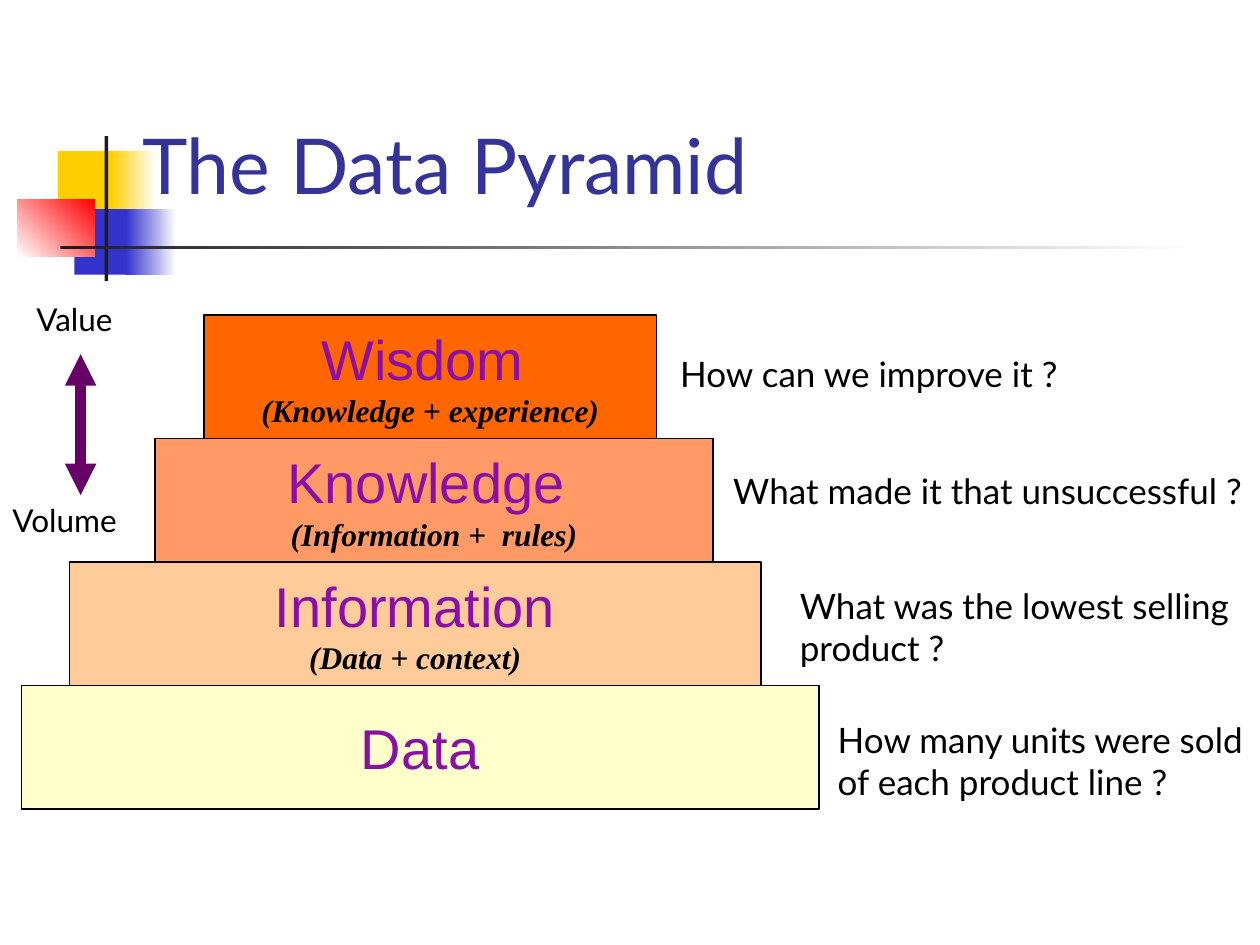
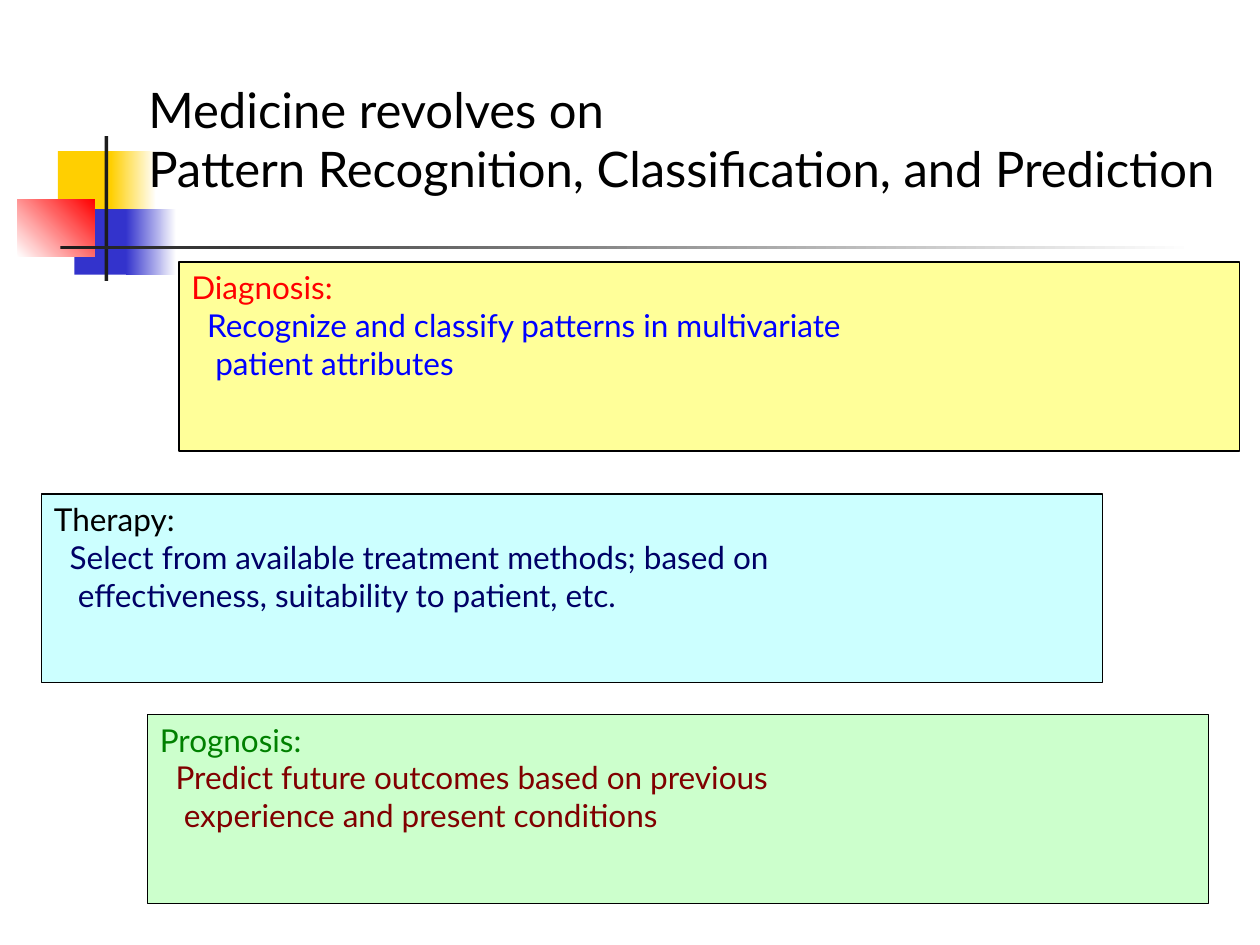
from dataclasses import dataclass, replace

from lxml import etree
from pptx import Presentation
from pptx.dml.color import RGBColor
from pptx.enum.shapes import MSO_CONNECTOR, MSO_SHAPE
from pptx.enum.text import MSO_ANCHOR, PP_ALIGN
from pptx.oxml.ns import qn
from pptx.util import Inches, Pt

RECT = MSO_SHAPE.RECTANGLE
STRAIGHT = MSO_CONNECTOR.STRAIGHT
TOP, MIDDLE = MSO_ANCHOR.TOP, MSO_ANCHOR.MIDDLE
LEFT, CENTER = PP_ALIGN.LEFT, PP_ALIGN.CENTER

COLS, ROWS = 100, 75
WIDTH, HEIGHT = Inches(10), Inches(7.5)


@dataclass(frozen=True)
class Style:
    size: int
    color: str = "000000"
    font: str = "Lato"
    strong: bool = False


@dataclass(frozen=True)
class Theme:
    white: str = "FFFFFF"
    black: str = "000000"
    dark: str = "1C1C1C"
    gold: str = "FFCF01"
    blue: str = "3333CC"
    red: str = "FF0000"
    arrow: str = "660066"
    edge: float = 0.75
    shaft: float = 6
    title: Style = Style(44, "333399")
    lead: Style = Style(28)
    ask: Style = Style(20)
    body: Style = Style(18)
    tier: Style = Style(32, "8A0FA7", "Arial")
    note: Style = Style(18, font="Times New Roman", strong=True)


@dataclass(frozen=True)
class Box:
    x: float
    y: float
    w: float
    h: float

    def inner(self, x, y, w, h):
        return Box(self.x + x, self.y + y, w, h)

    def place(self):
        return across(self.x), down(self.y), across(self.w), down(self.h)


THEME = Theme()
PAGE = Box(0, 0, COLS, ROWS)

TIERS = [
    ("Data", None, "FFFFCC", 1.7, 63.3, 0.5, 2.1, 34.5,
     ["How many units were sold", "of each product line ?"]),
    ("Information", "(Data + context)", "FFCC99", 5.5, 54.9, 2.1, 1.3, 37,
     ["What was the lowest selling", "product ?"]),
    ("Knowledge ", "(Information +  rules)", "FF9966", 12.3, 44.3, 0.6, 2, 42.8,
     ["What made it that unsuccessful ?"]),
    ("Wisdom ", "(Knowledge + experience)", "FF6600", 16.2, 35.9, 0.9, 2.5, 32.4,
     ["How can we improve it ?"]),
]

PANELS = [
    (14.2, 20.8, "FFFF99", "FF0000", "0000FF", "Diagnosis:",
     ["Recognize and classify patterns in multivariate", "patient attributes"]),
    (3.3, 39.2, "CCFFFF", "000000", "000066", "Therapy:",
     ["Select from available treatment methods; based on",
      "effectiveness, suitability to patient, etc."]),
    (11.7, 56.7, "CCFFCC", "008000", "800000", "Prognosis:",
     ["Predict future outcomes based on previous",
      "experience and present conditions"]),
]


def across(cols):
    return round(WIDTH * cols / COLS)


def down(rows):
    return round(HEIGHT * rows / ROWS)


def rgb(code):
    return RGBColor.from_string(code)


def write(frame, lines, align=LEFT, anchor=TOP):
    frame.word_wrap = True
    frame.vertical_anchor = anchor
    for i, (text, style, indent) in enumerate(lines):
        para = frame.add_paragraph() if i else frame.paragraphs[0]
        para.alignment = align
        if indent:
            props = para._p.get_or_add_pPr()
            props.set("marL", str(across(indent)))
            props.set("indent", "0")
        run = para.add_run()
        run.text = text
        font = run.font
        font.name, font.size = style.font, Pt(style.size)
        font.bold = font.italic = style.strong
        font.color.rgb = rgb(style.color)


def label(slide, box, texts, style, indent=0, anchor=TOP):
    frame = slide.shapes.add_textbox(*box.place()).text_frame
    write(frame, [(text, style, indent) for text in texts], anchor=anchor)


def block(slide, box, color, fade=None, angle=0, edge=False):
    shape = slide.shapes.add_shape(RECT, *box.place())
    shape.shadow.inherit = False
    if fade:
        shape.fill.gradient()
        shape.fill.gradient_angle = angle
        for stop, code in zip(shape.fill.gradient_stops, (color, fade)):
            stop.color.rgb = rgb(code)
    else:
        shape.fill.solid()
        shape.fill.fore_color.rgb = rgb(color)
    if edge:
        shape.line.color.rgb = rgb(THEME.black)
        shape.line.width = Pt(THEME.edge)
    else:
        shape.line.fill.background()
    return shape


def motif(slide, box):
    t = THEME
    block(slide, box.inner(3.2, 1.2, 4.8, 5.2), t.gold)
    block(slide, box.inner(7.4, 1.2, 3.6, 5.2), t.gold, t.white)
    block(slide, box.inner(4.5, 5.8, 4.6, 5.2), t.blue)
    block(slide, box.inner(8.6, 5.8, 4, 5.2), t.blue, t.white)
    block(slide, box.inner(0, 5, 6.1, 4.6), t.white, t.red, 45)
    block(slide, box.inner(6.9, 0, 0.3, 11.5), t.dark)
    block(slide, box.inner(3.4, 8.7, 90, 0.3), t.dark, t.white)


def pyramid(slide, box):
    step = box.h / len(TIERS)
    spots = []
    for i, (name, note, color, x, w, gap, drop, wide, asks) in enumerate(TIERS):
        tier = box.inner(x, box.h - (i + 1) * step, w, step)
        lines = [(name, THEME.tier, 0)]
        if note:
            lines.append((note, THEME.note, 0))
        shape = block(slide, tier, color, edge=True)
        write(shape.text_frame, lines, CENTER, MIDDLE)
        spots.append((tier.inner(w + gap, drop, wide, 4 * len(asks)), asks))
    for spot, asks in spots:
        label(slide, spot, asks, THEME.ask)


def scale(slide, box):
    x = across(box.x + 6.4)
    line = slide.shapes.add_connector(
        STRAIGHT, x, down(box.y + 16), x, down(box.y + 4.8))
    line.line.color.rgb = rgb(THEME.arrow)
    line.line.width = Pt(THEME.shaft)
    props = line._element.spPr
    for end in ("a:headEnd", "a:tailEnd"):
        etree.SubElement(props.find(qn("a:ln")), qn(end), type="triangle")
    etree.SubElement(props, qn("a:effectLst"))
    label(slide, box.inner(1.9, 0, 10.1, 4.6), ["Value"], THEME.body)
    label(slide, box.inner(0, 16, 13, 4.6), ["Volume"], THEME.body)


def panel(slide, box, fill, head, tone, name, texts):
    shape = block(slide, box, fill, edge=True)
    body = replace(THEME.body, color=tone)
    lines = [(name, replace(THEME.body, color=head), 0)]
    lines += [(text, body, pad) for text, pad in zip(texts, (1.25, 1.9))]
    write(shape.text_frame, lines)


def start(deck):
    slide = deck.slides.add_slide(deck.slide_layouts[6])
    motif(slide, PAGE.inner(1.4, 10.8, 93.4, 11.5))
    return slide


def data_slide(deck):
    slide = start(deck)
    label(slide, PAGE.inner(7.5, 6.7, 85, 12.5), ["The Data Pyramid"],
          THEME.title, 2.8, MIDDLE)
    pyramid(slide, PAGE.inner(0, 25, COLS, 39.2))
    scale(slide, PAGE.inner(0, 23.3, 13, 20.6))


def care_slide(deck):
    slide = start(deck)
    label(slide, PAGE.inner(10.8, 5.8, 87, 10.3),
          ["Medicine revolves on",
           "Pattern Recognition, Classification, and Prediction"], THEME.lead)
    for x, y, *rest in PANELS:
        panel(slide, PAGE.inner(x, y, 84.2, 15), *rest)


def main():
    deck = Presentation()
    deck.slide_width, deck.slide_height = WIDTH, HEIGHT
    data_slide(deck)
    care_slide(deck)
    deck.save("out.pptx")


if __name__ == "__main__":
    main()
